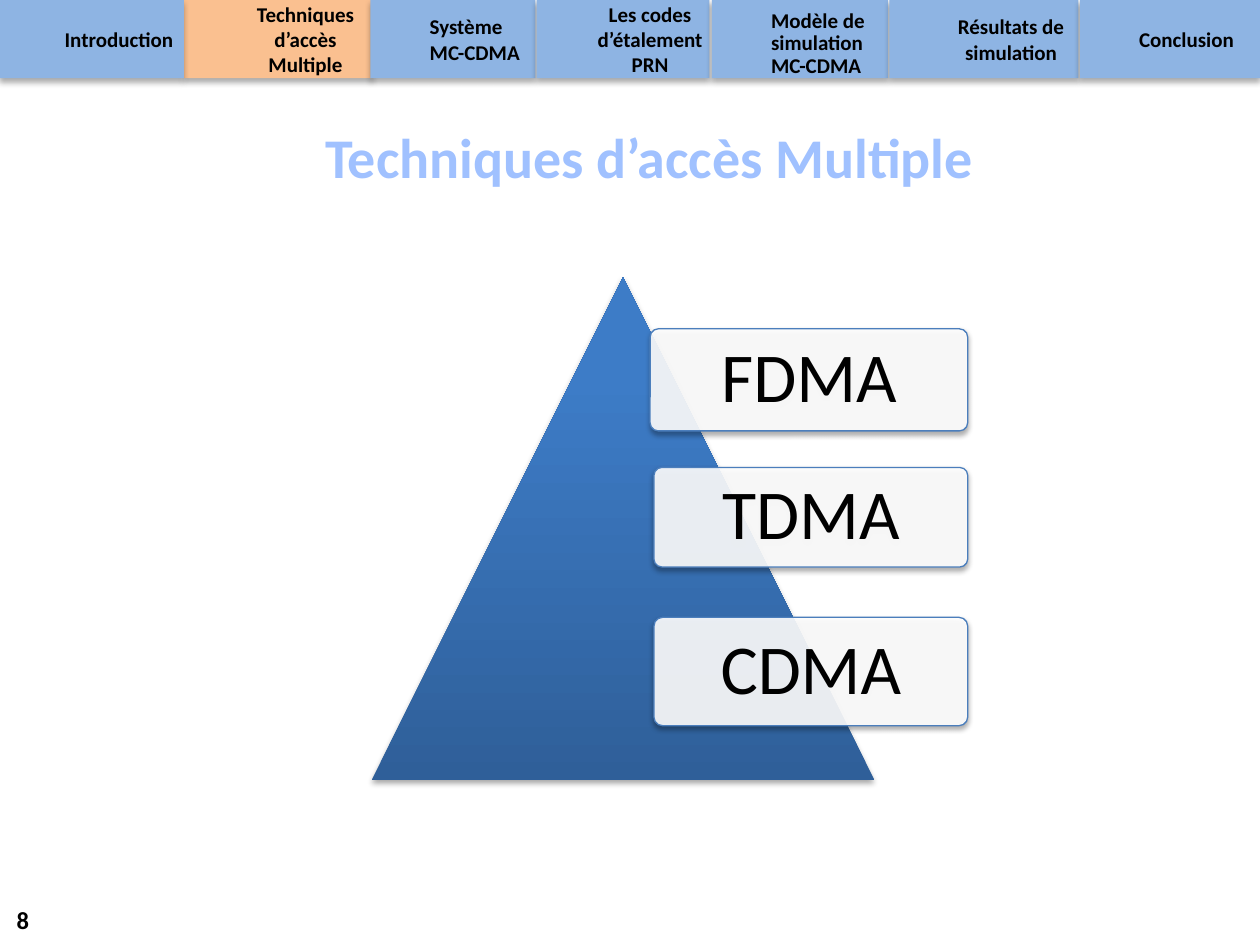
from lxml.etree import SubElement
from pptx import Presentation
from pptx.dml.color import RGBColor
from pptx.enum.shapes import MSO_SHAPE
from pptx.enum.text import MSO_ANCHOR, MSO_AUTO_SIZE, PP_ALIGN
from pptx.oxml.ns import qn
from pptx.util import Inches, Pt

BLACK = RGBColor(0x00, 0x00, 0x00)
WHITE = RGBColor(0xFF, 0xFF, 0xFF)
TAB_BLUE = RGBColor(0x8E, 0xB4, 0xE3)
TAB_ACTIVE = RGBColor(0xFA, 0xC0, 0x90)
TITLE_BLUE = RGBColor(0xA0, 0xC1, 0xFF)
CARD_LINE = RGBColor(0x4B, 0x7E, 0xBC)
PYRAMID_DARK = RGBColor(0x2F, 0x5F, 0x99)
PYRAMID_LIGHT = RGBColor(0x3D, 0x7C, 0xC7)
FONT = "Calibri"
TAB_HEIGHT = 0.62
CARD_RIGHT = 7.68
LEFT, CENTER, RIGHT = PP_ALIGN.LEFT, PP_ALIGN.CENTER, PP_ALIGN.RIGHT

TABS = [
    ("Techniques d’accès Multiple", 1.46, 1.5, CENTER),
    ("Système MC-CDMA", 2.94, 1.31, LEFT),
    ("Les codes d’étalement PRN", 4.26, 1.37, CENTER),
    ("Modèle de simulation MC-CDMA", 5.65, 1.4, LEFT),
    ("Résultats de simulation", 7.06, 1.5, CENTER),
    ("Conclusion", 8.57, 1.43, LEFT),
    ("Introduction", 0, 1.46, CENTER),
]
ACTIVE_TAB = "Techniques d’accès Multiple"
LOWERED_TAB = "Modèle de simulation MC-CDMA"
CARDS = [
    ("FDMA", 5.16, 2.61, 0.81),
    ("TDMA", 5.19, 3.71, 0.79),
    ("CDMA", 5.19, 4.9, 0.86),
]


def box(*lengths):
    """Convert left, top, width and height to inches."""
    return [Inches(n) for n in lengths]


def set_shadow(sp, blur, dist, alpha):
    """Give a shape a soft shadow that falls straight down."""
    sp.shadow.inherit = False
    effects = sp._element.spPr.find(qn("a:effectLst"))
    shadow = SubElement(effects, qn("a:outerShdw"), blurRad=str(Pt(blur)),
                        dist=str(Pt(dist)), dir="5400000", rotWithShape="0")
    color = SubElement(shadow, qn("a:srgbClr"), val="000000")
    SubElement(color, qn("a:alpha"), val=str(alpha * 1000))


def set_text(sp, text, size, align, margins, bold=True, color=BLACK, spacing=1.0):
    """Write one paragraph into a shape."""
    tf = sp.text_frame
    tf.word_wrap = True
    tf.auto_size = MSO_AUTO_SIZE.NONE
    tf.vertical_anchor = MSO_ANCHOR.MIDDLE
    tf.margin_left, tf.margin_top, tf.margin_right, tf.margin_bottom = box(*margins)
    p = tf.paragraphs[0]
    p.alignment = align
    p.line_spacing = spacing
    r = p.add_run()
    r.text = text
    r.font.name = FONT
    r.font.size = Pt(size)
    r.font.bold = bold
    r.font.color.rgb = color


def add_tab(s, text, left, width, align):
    """Add one section of the navigation bar."""
    sp = s.shapes.add_shape(MSO_SHAPE.RECTANGLE, *box(left, 0, width, TAB_HEIGHT))
    sp.fill.solid()
    sp.fill.fore_color.rgb = TAB_ACTIVE if text == ACTIVE_TAB else TAB_BLUE
    sp.line.fill.background()
    set_shadow(sp, 3.5, 2.2, 32)
    lowered = text == LOWERED_TAB
    set_text(sp, text, 12, align, (0.47, 0.12 if lowered else 0.04, 0.04, 0.04),
             spacing=0.9 if lowered else 1.0)


def add_title(s, text):
    """Place and format the title placeholder."""
    sp = s.shapes.title
    sp.left, sp.top, sp.width, sp.height = box(2.48, 0.92, 5.59, 0.64)
    set_text(sp, text, 32, LEFT, (0.1, 0.05, 0.1, 0.05), color=TITLE_BLUE)


def add_pyramid(s):
    """Add the shaded triangle behind the cards."""
    sp = s.shapes.add_shape(MSO_SHAPE.ISOSCELES_TRIANGLE, *box(2.95, 2.2, 3.99, 3.99))
    sp.fill.gradient()
    sp.fill.gradient_angle = 90
    shades = [(0, PYRAMID_DARK), (0.8, PYRAMID_LIGHT)]
    for stop, (position, color) in zip(sp.fill.gradient_stops, shades):
        stop.position = position
        stop.color.rgb = color
    sp.line.fill.background()
    set_shadow(sp, 3.1, 1.8, 35)


def add_card(s, text, left, top, height):
    """Add a rounded, slightly transparent card."""
    sp = s.shapes.add_shape(MSO_SHAPE.ROUNDED_RECTANGLE,
                            *box(left, top, CARD_RIGHT - left, height))
    sp.adjustments[0] = 0.08
    sp.fill.solid()
    sp.fill.fore_color.rgb = WHITE
    color = sp._element.spPr.find(qn("a:solidFill")).find(qn("a:srgbClr"))
    SubElement(color, qn("a:alpha"), val="90000")
    sp.line.color.rgb = CARD_LINE
    sp.line.width = Pt(0.75)
    set_shadow(sp, 3.1, 1.8, 35)
    set_text(sp, text, 40, CENTER, (0.1,) * 4, bold=False, spacing=0.9)


def add_page_number(s, number):
    """Add the page number in the bottom left corner."""
    sp = s.shapes.add_textbox(*box(0, 7.1, 0.33, 0.4))
    set_text(sp, number, 14, RIGHT, (0.1, 0.05, 0.1, 0.05))


def main():
    """Build the slide and save it."""
    prs = Presentation()
    prs.slide_width, prs.slide_height = Inches(10), Inches(7.5)
    s = prs.slides.add_slide(prs.slide_layouts[5])
    add_page_number(s, "8")
    for tab in TABS:
        add_tab(s, *tab)
    add_title(s, "Techniques d’accès Multiple")
    add_pyramid(s)
    for card in CARDS:
        add_card(s, *card)
    prs.save("out.pptx")


if __name__ == "__main__":
    main()
